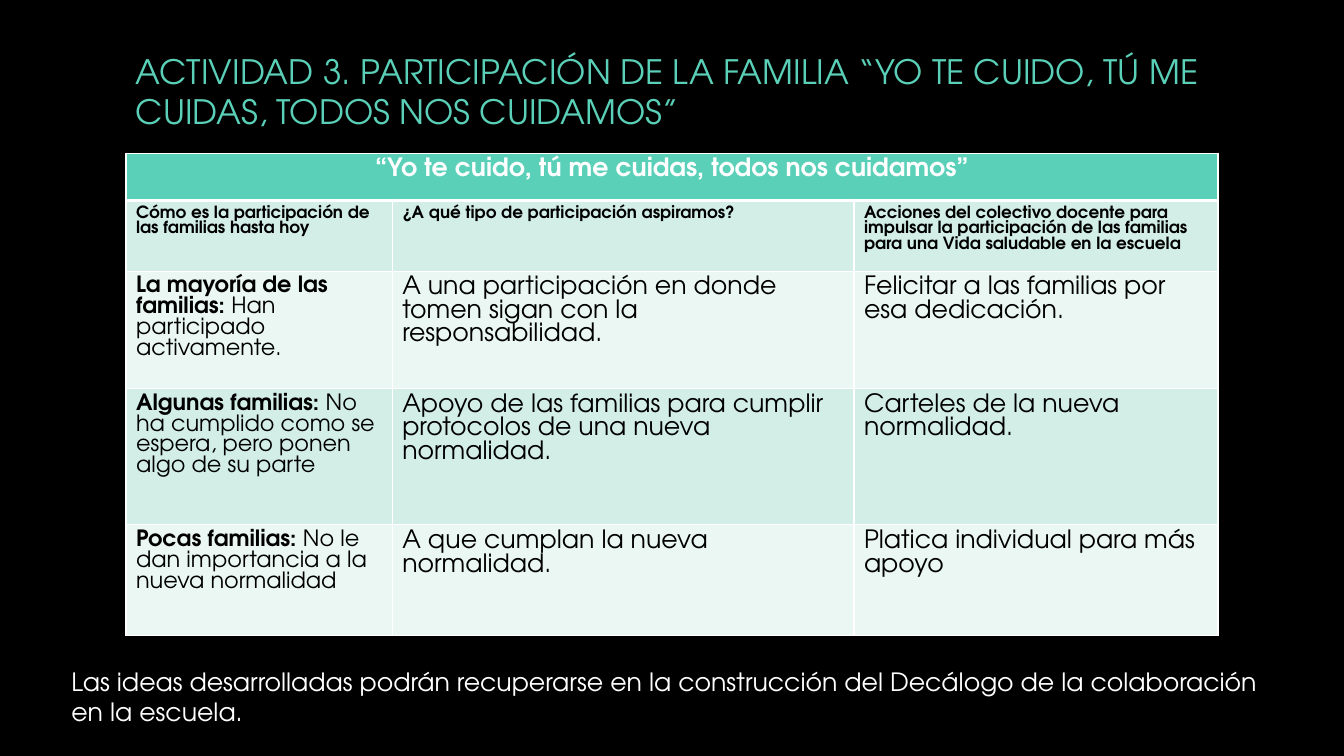
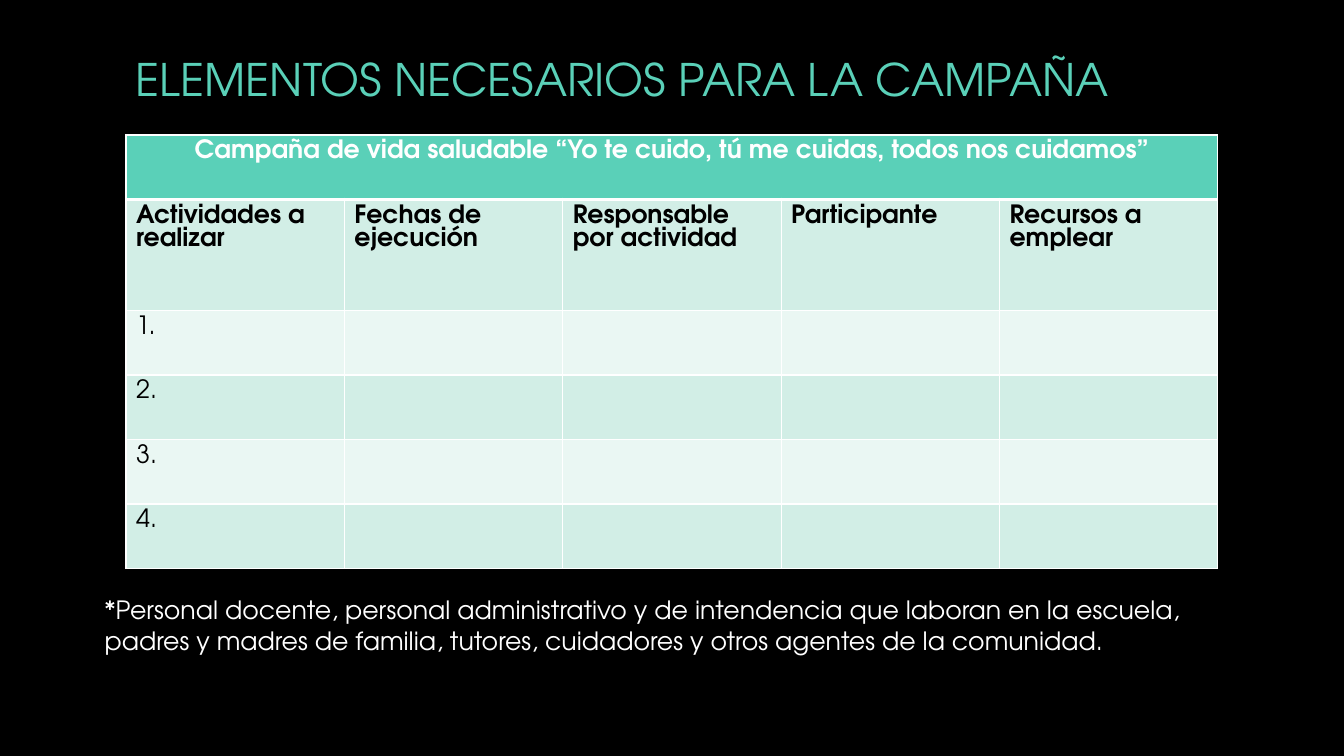
import pptx
import pptx.dml.color
import pptx.enum.text
import pptx.oxml
import pptx.oxml.ns
import pptx.util
from pptx.util import Inches

RGBColor = pptx.dml.color.RGBColor
BLACK = RGBColor(0x00, 0x00, 0x00)
WHITE = RGBColor(0xFF, 0xFF, 0xFF)
TEAL = RGBColor(0x5A, 0xD0, 0xB8)
BANDS = (RGBColor(0xD2, 0xEE, 0xE6), RGBColor(0xEA, 0xF7, 0xF3))


class Deck:
    """Shared style and the slide being built."""

    font = "TeX Gyre Adventor"
    left, width = 1.25, 10.83

    def __init__(self):
        self.prs = pptx.Presentation()
        self.prs.slide_width = Inches(13.33)
        self.prs.slide_height = Inches(7.5)
        self.s = None

    def slide(self):
        self.s = self.prs.slides.add_slide(self.prs.slide_layouts[6])
        fill = self.s.background.fill
        fill.solid()
        fill.fore_color.rgb = BLACK

    def style(self, p, size, color, bold=None):
        p.font.name = self.font
        p.font.size = pptx.util.Pt(size)
        p.font.color.rgb = color
        p.font.bold = bold

    def textbox(self, text, left, top, width, height, size, color):
        tf = self.s.shapes.add_textbox(
            Inches(left), Inches(top), Inches(width), Inches(height)).text_frame
        tf.word_wrap = True
        p = tf.paragraphs[0]
        p.text = text
        self.style(p, size, color)
        return tf

    def title(self, text, top, height, size):
        tf = self.textbox(text, self.left, top, self.width, height, size, TEAL)
        tf.vertical_anchor = pptx.enum.text.MSO_ANCHOR.MIDDLE

    def note(self, text, left, top, width):
        self.textbox(text, left, top, width, 0.71, 18, WHITE)

    def borders(self, cell, **widths):
        """White borders, 1 pt unless a side is given another width."""
        tc_pr = cell._tc.get_or_add_tcPr()
        for side in "LRTB":
            w = pptx.util.Pt(widths.get(side, 1))
            tc_pr.append(pptx.oxml.parse_xml(
                f'<a:ln{side} {pptx.oxml.ns.nsdecls("a")} w="{w}"><a:solidFill>'
                f'<a:srgbClr val="{WHITE}"/></a:solidFill></a:ln{side}>'))

    def cell(self, cell, content, size, color, bold, fill, **widths):
        """Content is a text, or a (bold lead, plain rest) pair."""
        self.borders(cell, **widths)
        cell.fill.solid()
        cell.fill.fore_color.rgb = fill
        p = cell.text_frame.paragraphs[0]
        self.style(p, size, color, bold)
        if isinstance(content, tuple):
            for text, strong in zip(content, (True, False)):
                r = p.add_run()
                r.text = text
                r.font.bold = strong
        elif content:
            p.text = content
        return p

    def table(self, top, cols, heights, heading, labels, rows, label_size, sizes):
        """Banded table: merged heading, bold labels, then body rows."""
        table = self.s.shapes.add_table(
            len(heights), len(cols), Inches(self.left), Inches(top),
            Inches(sum(cols)), Inches(sum(heights))).table
        table.first_row = table.horz_banding = False
        for column, width in zip(table.columns, cols):
            column.width = Inches(width)
        for row, height in zip(table.rows, heights):
            row.height = Inches(height)

        # Heading
        for c in range(len(cols)):
            p = self.cell(table.cell(0, c), heading if c == 0 else "",
                          18, WHITE, True, TEAL, B=3)
            p.alignment = pptx.enum.text.PP_ALIGN.CENTER
        table.cell(0, 0).merge(table.cell(0, len(cols) - 1))

        # Labels and body
        for c, label in enumerate(labels):
            self.cell(table.cell(1, c), label, label_size, BLACK, True, BANDS[0], T=3)
        for n, row in enumerate(rows, start=1):
            for c, content in enumerate(row):
                self.cell(table.cell(n + 1, c), content, sizes[c], BLACK, False,
                          BANDS[n % 2])


def family_slide(deck):
    deck.slide()
    deck.title("ACTIVIDAD 3. PARTICIPACIÓN DE LA FAMILIA “YO TE CUIDO, TÚ ME "
               "CUIDAS, TODOS NOS CUIDAMOS”", -0.14, 2.08, 24)
    deck.table(
        1.52, (2.64, 4.58, 3.61), (0.47, 0.66, 1.1, 1.35, 1.1),
        "“Yo te cuido, tú me cuidas, todos nos cuidamos”",
        ("Cómo es la participación de las familias hasta hoy",
         "¿A qué tipo de participación aspiramos?",
         "Acciones del colectivo docente para impulsar la participación de las "
         "familias para una Vida saludable en la escuela"),
        ((("La mayoría de las familias: ", "Han participado activamente."),
          "A una participación en donde tomen sigan con la responsabilidad.",
          "Felicitar a las familias por esa dedicación."),
         (("Algunas familias: ",
           "No ha cumplido como se espera, pero ponen algo de su parte"),
          "Apoyo de las familias para cumplir protocolos de una nueva normalidad.",
          "Carteles de la nueva normalidad."),
         (("Pocas familias: ", "No le dan importancia a la nueva normalidad"),
          "A que cumplan la nueva normalidad.",
          "Platica individual para más apoyo")),
        label_size=12, sizes=(16, 18, 18))
    deck.note("Las ideas desarrolladas podrán recuperarse en la construcción del "
              "Decálogo de la colaboración en la escuela.", 0.61, 6.56, 12.1)


def campaign_slide(deck):
    deck.slide()
    deck.title("ELEMENTOS NECESARIOS PARA LA CAMPAÑA", 0.33, 0.89, 32)
    labels = ("Actividades a realizar", "Fechas de ejecución",
              "Responsable por actividad", "Participante", "Recursos a emplear")
    count = len(labels)
    deck.table(
        1.34, [deck.width / count] * count, [0.64, 1.1] + [0.64] * 4,
        "Campaña de vida saludable “Yo te cuido, tú me cuidas, todos nos cuidamos”",
        labels, [[f"{n}."] + [""] * (count - 1) for n in range(1, 5)],
        label_size=18, sizes=[18] * count)
    deck.note("*Personal docente, personal administrativo y de intendencia que "
              "laboran en la escuela, padres y madres de familia, tutores, "
              "cuidadores y otros agentes de la comunidad.", 0.94, 5.85, 11.36)


def main():
    deck = Deck()
    family_slide(deck)
    campaign_slide(deck)
    deck.prs.save("out.pptx")


if __name__ == "__main__":
    main()
